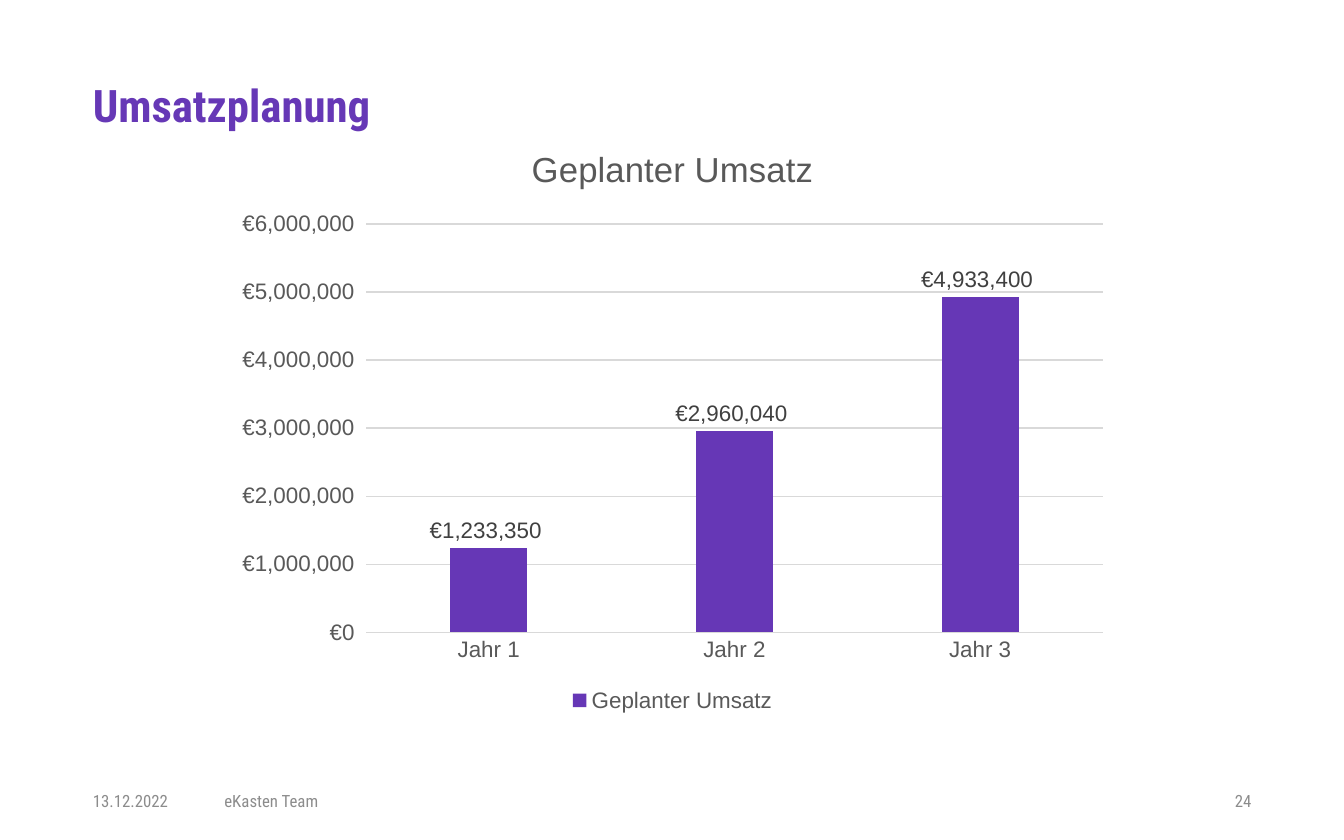
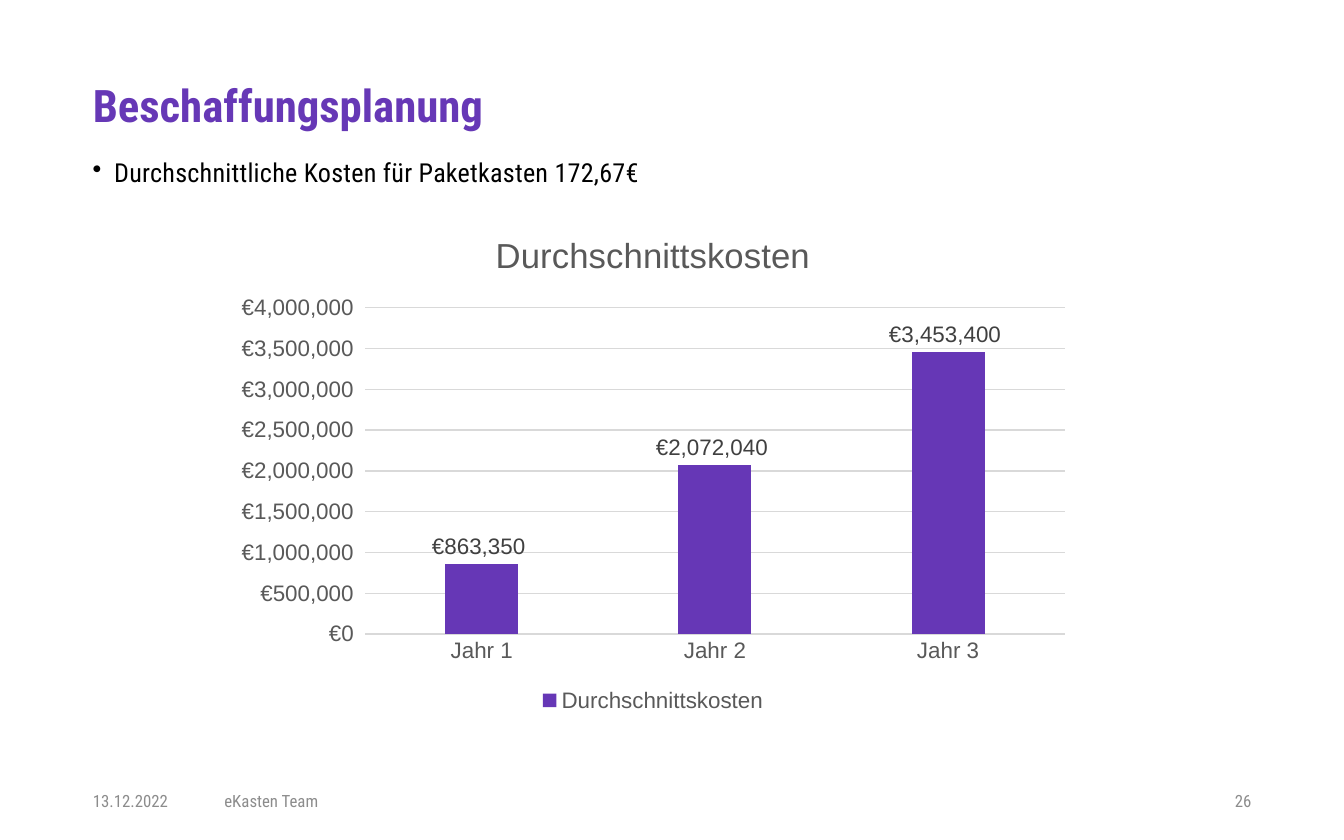
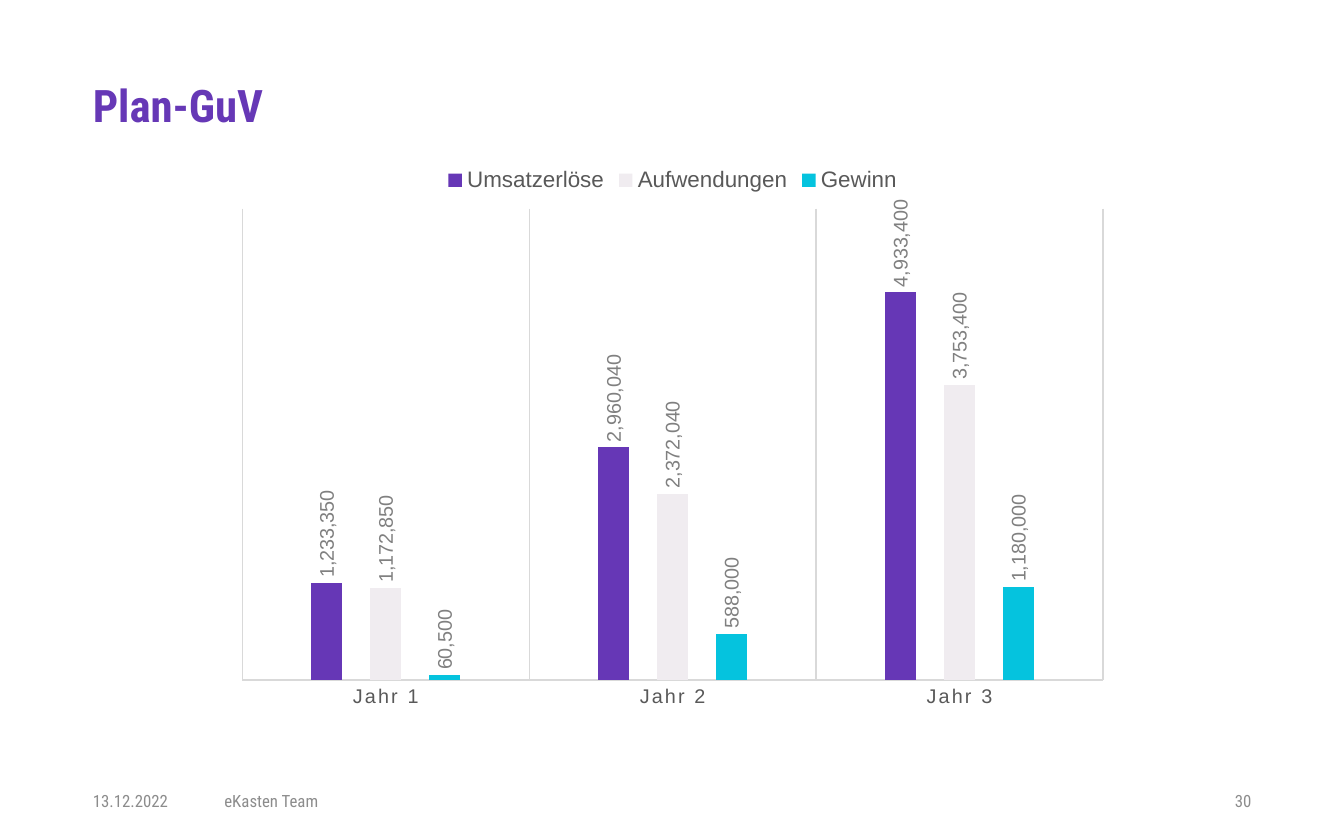
from lxml import etree
from pptx import Presentation
from pptx.chart.data import CategoryChartData
from pptx.dml.color import RGBColor
from pptx.enum.chart import (XL_CHART_TYPE, XL_LABEL_POSITION,
                             XL_LEGEND_POSITION, XL_TICK_MARK)
from pptx.enum.text import MSO_ANCHOR, PP_ALIGN
from pptx.oxml.ns import qn
from pptx.util import Inches, Pt

COLUMN = XL_CHART_TYPE.COLUMN_CLUSTERED
OUT_END = XL_LABEL_POSITION.OUTSIDE_END
BOTTOM, TOP = XL_LEGEND_POSITION.BOTTOM, XL_LEGEND_POSITION.TOP
NO_TICK = XL_TICK_MARK.NONE
MIDDLE = MSO_ANCHOR.MIDDLE
LEFT, RIGHT = PP_ALIGN.LEFT, PP_ALIGN.RIGHT

COLORS = {
    "title": "6638B6", "body": "000000", "footer": "8C8C8C",
    "purple": "6637B6", "pale": "F0ECF0", "cyan": "05C3DE",
    "axis": "595959", "label": "404040", "soft": "808080", "grid": "D9D9D9",
}
TEXT_FONT, CHART_FONT = "Roboto Condensed", "Arial"
MARGIN = 0.69
YEARS = ["Jahr 1", "Jahr 2", "Jahr 3"]
EURO = '"€"#,##0_);[Red]\\("€"#,##0\\)'
PLAIN = "#,##0"
SALES = [1233350, 2960040, 4933400]
COSTS = [863350, 2072040, 3453400]
SPEND = [1172850, 2372040, 3753400]
PROFIT = [60500, 588000, 1180000]


def rgb(key):
    return RGBColor.from_string(COLORS[key])


def style(font, size, color, name=CHART_FONT, bold=False):
    font.name, font.size, font.bold = name, Pt(size), bold
    font.color.rgb = rgb(color)


# Text
def add_text(slide, text, box, size, color, bold=False, align=LEFT, anchor=None):
    frame = slide.shapes.add_textbox(*map(Inches, box)).text_frame
    frame.word_wrap = True
    frame.margin_left = frame.margin_right = 0
    frame.margin_top = frame.margin_bottom = 0
    if anchor is not None:
        frame.vertical_anchor = anchor
    frame.text = text
    para = frame.paragraphs[0]
    para.alignment = align
    style(para.runs[0].font, size, color, TEXT_FONT, bold)
    return para


def add_bullet(slide, text, box):
    para = add_text(slide, text, box, 14, "body")
    para.line_spacing, para.space_before = 1.1, Pt(7.5)
    props = para._p.get_or_add_pPr()
    indent = Inches(0.16)
    props.set("marL", str(indent))
    props.set("indent", str(-indent))
    etree.SubElement(props, qn("a:buChar")).set("char", "•")
    para.runs[0].font._element.set("spc", "10")


def add_page(deck, title, number):
    slide = deck.slides.add_slide(deck.slide_layouts[6])
    head = add_text(slide, title, (MARGIN, 0.62, 8.62, 0.32), 24, "title", True)
    head.line_spacing = 0.9
    footers = [("13.12.2022", MARGIN, 0.72, LEFT),
               ("eKasten Team", 1.67, 6.66, LEFT),
               (str(number), 8.59, 0.72, RIGHT)]
    for text, left, width, align in footers:
        add_text(slide, text, (left, 5.79, width, 0.33), 9, "footer",
                 align=align, anchor=MIDDLE)
    return slide


# Charts
def draw_grid(axis):
    axis.has_major_gridlines = True
    draw_line(axis.major_gridlines.format.line)


def draw_line(line):
    line.color.rgb = rgb("grid")
    line.width = Pt(0.75)


def add_labels(series, size, color, code):
    labels = series.data_labels
    labels.show_value = True
    labels.position = OUT_END
    labels.number_format, labels.number_format_is_linked = code, False
    style(labels.font, size, color)
    return labels


def add_columns(slide, box, rows, legend, gap, overlap, cat_size, code):
    """Add a column chart; rows holds (name, values, colour)."""
    data = CategoryChartData(number_format=code)
    data.categories = YEARS
    for name, values, _ in rows:
        data.add_series(name, values)
    chart = slide.shapes.add_chart(COLUMN, *map(Inches, box), data).chart
    style(chart.font, 10, "body")
    chart.has_title = False
    chart.has_legend = True
    chart.legend.position = legend
    chart.legend.include_in_layout = False
    style(chart.legend.font, 12, "axis")

    plot = chart.plots[0]
    plot.vary_by_categories = False
    plot.gap_width, plot.overlap = gap, overlap
    for series, (_, _, color) in zip(plot.series, rows):
        series.invert_if_negative = False
        series.format.fill.solid()
        series.format.fill.fore_color.rgb = rgb(color)

    for axis in (chart.category_axis, chart.value_axis):
        axis.major_tick_mark = axis.minor_tick_mark = NO_TICK
    draw_line(chart.category_axis.format.line)
    style(chart.category_axis.tick_labels.font, cat_size, "axis")
    ticks = chart.value_axis.tick_labels
    ticks.number_format, ticks.number_format_is_linked = code, False
    return chart


def add_euro(slide, box, name, values):
    """Single series with euro axis and title."""
    chart = add_columns(slide, box, [(name, values, "purple")], BOTTOM,
                        219, -27, 12, EURO)
    chart.has_title = True
    frame = chart.chart_title.text_frame
    frame.text = name
    style(frame.paragraphs[0].runs[0].font, 18.6, "axis")
    chart.chart_title.include_in_layout = False
    axis = chart.value_axis
    draw_grid(axis)
    axis.format.line.fill.background()
    style(axis.tick_labels.font, 12, "axis")
    add_labels(chart.plots[0].series[0], 12, "label", EURO)


def add_profit(slide, box, rows):
    """Grouped columns with upright labels and no value axis."""
    chart = add_columns(slide, box, rows, TOP, 444, -90, 10.6, PLAIN)
    chart.value_axis.has_major_gridlines = False
    chart.value_axis.visible = False
    draw_grid(chart.category_axis)
    chart.category_axis.tick_labels.font._element.set("spc", "120")
    for series in chart.plots[0].series:
        labels = add_labels(series, 10.6, "soft", PLAIN)
        body = labels._element.find(qn("c:txPr")).find(qn("a:bodyPr"))
        body.set("rot", "-5400000")
        body.set("vert", "horz")


def main():
    deck = Presentation()
    deck.slide_width, deck.slide_height = Inches(10), Inches(6.25)

    # Sales
    slide = add_page(deck, "Umsatzplanung", 24)
    add_euro(slide, (1.67, 0.9, 6.67, 4.44), "Geplanter Umsatz", SALES)

    # Procurement
    slide = add_page(deck, "Beschaffungsplanung", 26)
    add_bullet(slide, "Durchschnittliche Kosten für Paketkasten 172,67€",
               (MARGIN, 1.14, 6, 3.97))
    add_euro(slide, (1.67, 1.55, 6.38, 3.79), "Durchschnittskosten", COSTS)

    # Profit and loss
    slide = add_page(deck, "Plan-GuV", 30)
    add_profit(slide, (1.67, 1.14, 6.67, 4.21), [
        ("Umsatzerlöse", SALES, "purple"),
        ("Aufwendungen", SPEND, "pale"),
        ("Gewinn", PROFIT, "cyan"),
    ])

    deck.save("out.pptx")


if __name__ == "__main__":
    main()
